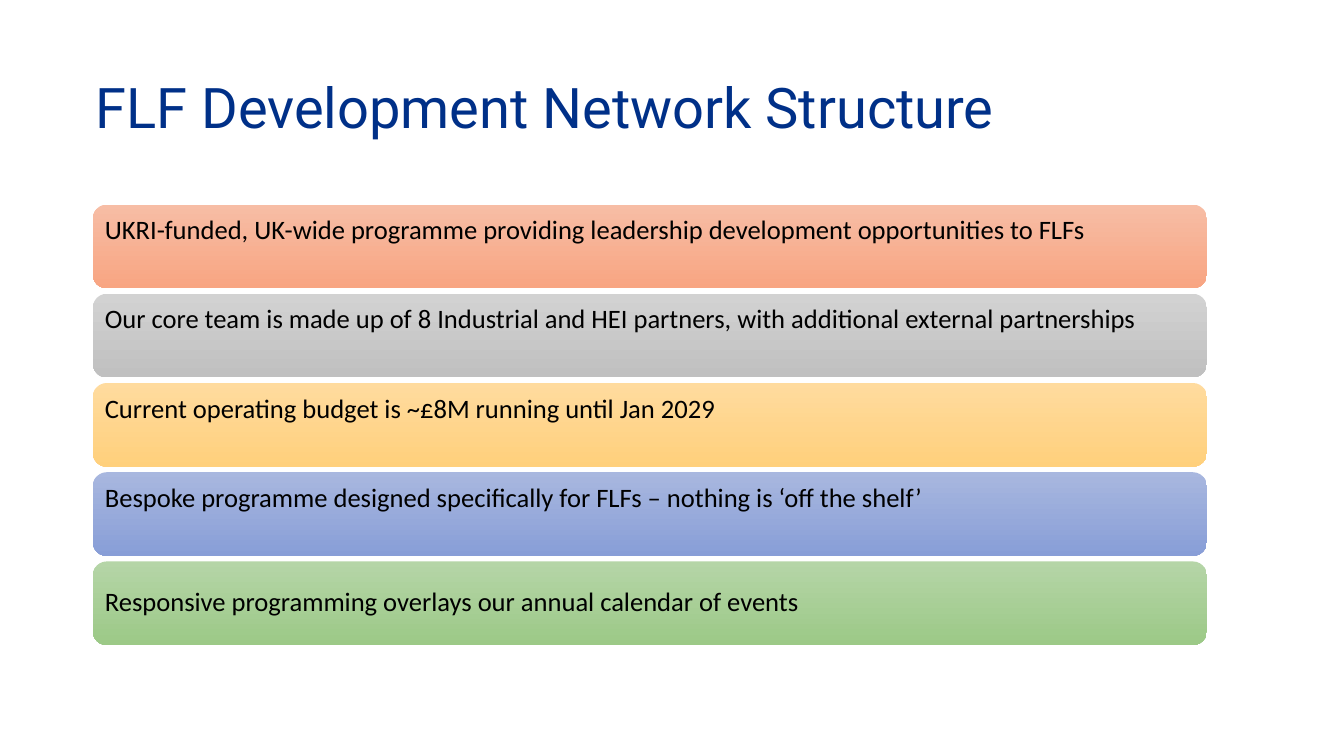
from pptx import Presentation
from pptx.dml.color import RGBColor
from pptx.enum.shapes import MSO_SHAPE
from pptx.enum.text import MSO_ANCHOR, PP_ALIGN
from pptx.util import Inches, Pt

BAR_LEFT, BAR_TOP, BAR_WIDTH, BAR_HEIGHT = 0.92, 2.03, 11.05, 0.83
BAR_PITCH = 0.885

BARS = [
    ("UKRI-funded, UK-wide programme providing leadership development opportunities to FLFs",
     "F7BDA5", "F8A582", MSO_ANCHOR.TOP),
    ("Our core team is made up of 8 Industrial and HEI partners, with additional external partnerships",
     "D2D2D2", "C0C0C0", MSO_ANCHOR.TOP),
    ("Current operating budget is ~£8M running until Jan 2029",
     "FFDB9E", "FFD07C", MSO_ANCHOR.TOP),
    ("Bespoke programme designed specifically for FLFs – nothing is ‘off the shelf’",
     "A8B7DF", "889ED7", MSO_ANCHOR.TOP),
    ("Responsive programming overlays our annual calendar of events",
     "B5D5A7", "9CC987", MSO_ANCHOR.MIDDLE),
]


def color(value):
    return RGBColor.from_string(value)


def write_text(shape, text, *, font, size, fill, anchor=MSO_ANCHOR.MIDDLE, inset=(0.1, 0.05)):
    frame = shape.text_frame
    frame.word_wrap = True
    frame.vertical_anchor = anchor
    frame.margin_left = frame.margin_right = Inches(inset[0])
    frame.margin_top = frame.margin_bottom = Inches(inset[1])
    para = frame.paragraphs[0]
    para.alignment = PP_ALIGN.LEFT
    para.line_spacing = 0.9
    span = para.add_run()
    span.text = text
    span.font.name = font
    span.font.size = Pt(size)
    span.font.color.rgb = color(fill)


def add_title(page, text):
    box = page.shapes.add_textbox(Inches(0.85), Inches(0.37), Inches(10.94), Inches(1.45))
    write_text(box, text, font="Roboto", size=40, fill="003088")


def add_bar(page, top, text, upper, lower, anchor):
    bar = page.shapes.add_shape(
        MSO_SHAPE.ROUNDED_RECTANGLE,
        Inches(BAR_LEFT), Inches(top), Inches(BAR_WIDTH), Inches(BAR_HEIGHT),
    )
    bar.shadow.inherit = False
    bar.line.fill.background()
    bar.fill.gradient()
    bar.fill.gradient_angle = 270
    for stop, value in zip(bar.fill.gradient_stops, (upper, lower)):
        stop.color.rgb = color(value)
    write_text(bar, text, font="Calibri", size=19, fill="000000", anchor=anchor, inset=(0.08, 0.08))


def main():
    deck = Presentation()
    deck.slide_width = Inches(13.33)
    deck.slide_height = Inches(7.5)
    page = deck.slides.add_slide(deck.slide_layouts[6])
    add_title(page, "FLF Development Network Structure")
    for index, bar in enumerate(BARS):
        add_bar(page, BAR_TOP + index * BAR_PITCH, *bar)
    deck.save("out.pptx")


if __name__ == "__main__":
    main()
